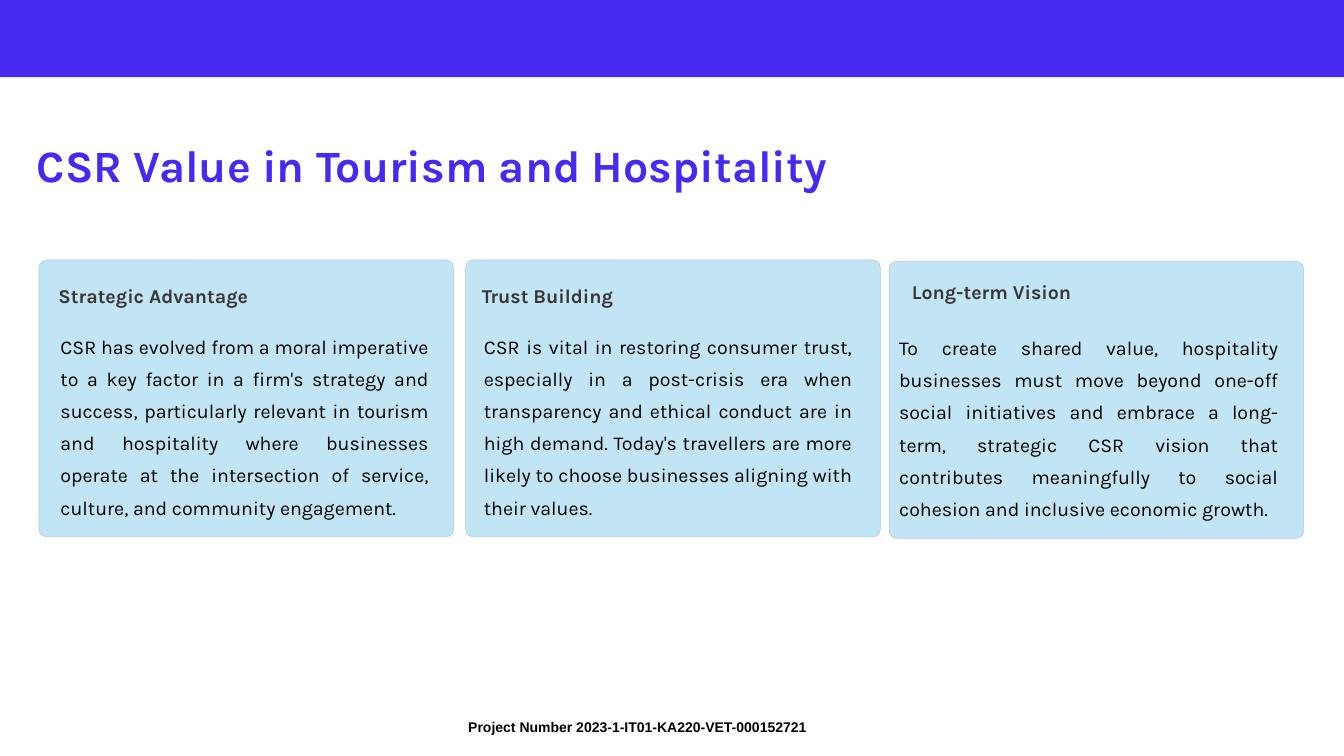
from pptx import Presentation
from pptx.dml.color import RGBColor
from pptx.enum.shapes import MSO_SHAPE
from pptx.enum.text import MSO_ANCHOR, MSO_AUTO_SIZE, PP_ALIGN
from pptx.util import Pt

RECT, ROUND = MSO_SHAPE.RECTANGLE, MSO_SHAPE.ROUNDED_RECTANGLE
LEFT, JUST = PP_ALIGN.LEFT, PP_ALIGN.JUSTIFY
MIDDLE, TOP = MSO_ANCHOR.MIDDLE, MSO_ANCHOR.TOP
FIXED = MSO_AUTO_SIZE.NONE

TITLE = {"name": "Karla", "size": Pt(48), "bold": True}
HEAD = {"name": "Karla", "size": Pt(21), "bold": True}
BODY = {"name": "Karla", "size": Pt(21), "bold": False}
FOOT = {"name": "Arial", "size": Pt(15), "bold": True}

# Card corner, then heading corner, body corner and body width
CARDS = [
    ((41.8, 278.6), (62.6, 293.8), (64.8, 349.2), 394.6, "Strategic Advantage",
     "CSR has evolved from a moral imperative to a key factor in a firm's strategy "
     "and success, particularly relevant in tourism and hospitality where businesses "
     "operate at the intersection of service, culture, and community engagement."),
    ((499, 278.6), (516.2, 293.8), (518.4, 349.2), 394.6, "Trust Building",
     "CSR is vital in restoring consumer trust, especially in a post-crisis era when "
     "transparency and ethical conduct are in high demand. Today's travellers are more "
     "likely to choose businesses aligning with their values."),
    ((952.6, 280.1), (977, 289.4), (963.4, 350.6), 406.1, "Long-term Vision",
     "To create shared value, hospitality businesses must move beyond one-off social "
     "initiatives and embrace a long-term, strategic CSR vision that contributes "
     "meaningfully to social cohesion and inclusive economic growth."),
]


def color(fmt, value):
    """Set a colour format from a hex string."""
    fmt.rgb = RGBColor.from_string(value)


def panel(slide, kind, box, fill, line=None):
    """Add a filled shape with an optional thin line."""
    shape = slide.shapes.add_shape(kind, *map(Pt, box))
    shape.shadow.inherit = False
    shape.fill.solid()
    color(shape.fill.fore_color, fill)
    if line:
        color(shape.line.color, line)
        shape.line.width = Pt(0.6)
    else:
        shape.line.fill.background()
    return shape


def write(shape, text, style, tint, space, align=LEFT, wrap=True, inset=0, anchor=TOP):
    """Put one styled paragraph into a shape."""
    frame = shape.text_frame
    values = {"word_wrap": wrap, "auto_size": FIXED, "vertical_anchor": anchor}
    if inset is not None:
        for side in ("left", "top", "right", "bottom"):
            values[f"margin_{side}"] = Pt(inset)
    for key, value in values.items():
        setattr(frame, key, value)
    para = frame.paragraphs[0]
    para.alignment, para.line_spacing = align, space
    run = para.add_run()
    run.text = text
    for key, value in style.items():
        setattr(run.font, key, value)
    color(run.font.color, tint)


def label(slide, box, *args, **opts):
    """Add a text box with one styled paragraph."""
    write(slide.shapes.add_textbox(*map(Pt, box)), *args, **opts)


def title(slide, box, text):
    """Place and fill the title placeholder."""
    shape = slide.shapes.title
    shape.left, shape.top, shape.width, shape.height = map(Pt, box)
    write(shape, text, TITLE, "462AF0", 0.9, inset=None, anchor=MIDDLE)


def card(slide, spot, top, low, wide, head, body):
    """Add a card with its heading and body text."""
    shape = panel(slide, ROUND, (*spot, 444.2, 296.6), "C1E5F5", "BBC2DC")
    shape.adjustments[0] = 0.027
    label(slide, (*top, 290, 36), head, HEAD, "3B3535", Pt(35.2), wrap=False)
    label(slide, (*low, wide, 243), body, BODY, "000000", Pt(34.5), align=JUST)


def main():
    """Build the slide and save it."""
    deck = Presentation()
    deck.slide_width, deck.slide_height = Pt(1440), Pt(810)
    slide = deck.slides.add_slide(deck.slide_layouts[5])
    label(slide, (494.6, 766.8, 382.3, 25.2), "Project Number 2023-1-IT01-KA220-VET-000152721",
          FOOT, "000000", 1.0, wrap=False, inset=None)
    panel(slide, RECT, (0, -1.4, 1440, 84.2), "462AF0")
    title(slide, (32.4, 102.2, 1242, 156.2), "CSR Value in Tourism and Hospitality")
    for item in CARDS:
        card(slide, *item)
    deck.save("out.pptx")


if __name__ == "__main__":
    main()
